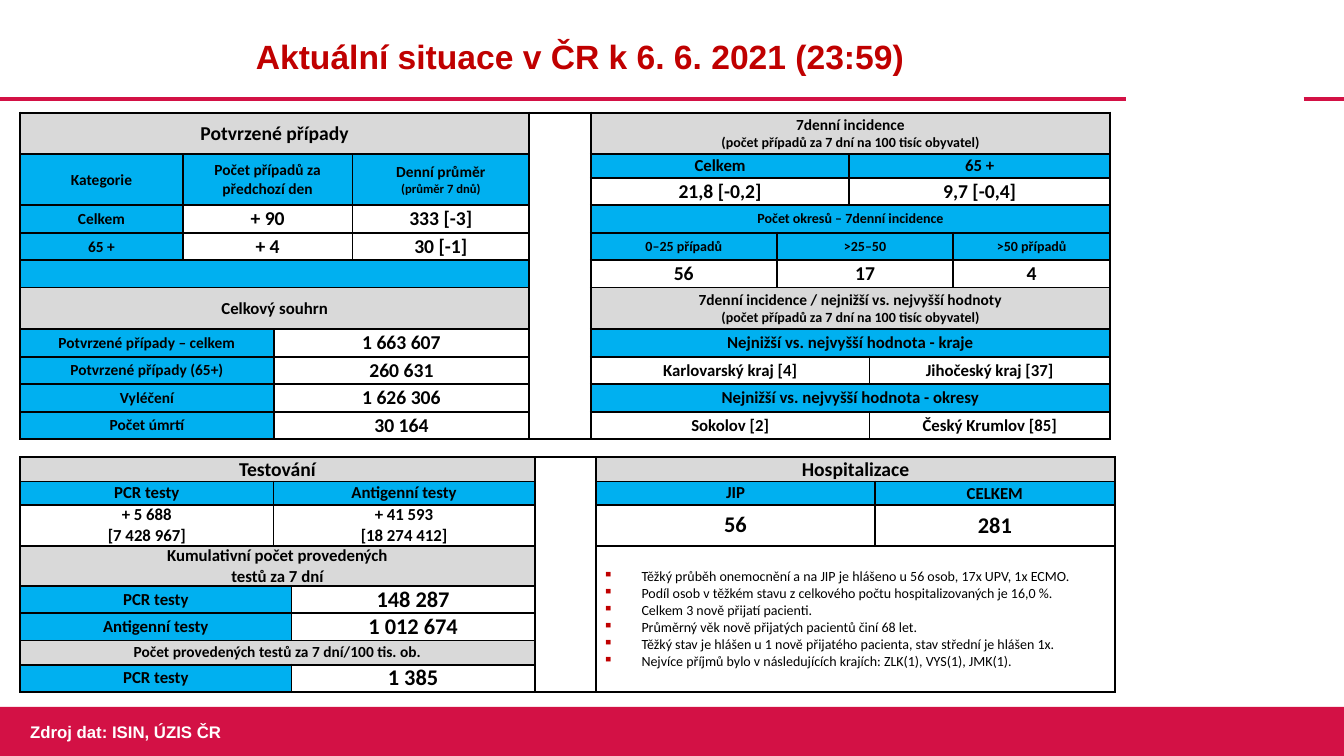
from dataclasses import dataclass

import lxml.etree
import pptx
import pptx.dml.color
import pptx.enum.shapes
import pptx.enum.text
import pptx.oxml.ns
import pptx.util

ALIGN = pptx.enum.text.PP_ALIGN
ANCHOR = pptx.enum.text.MSO_ANCHOR


@dataclass(frozen=True)
class Theme:
    crimson: str = "D31145"
    red: str = "C00000"
    blue: str = "00B0F0"
    gray: str = "D9D9D9"
    white: str = "FFFFFF"
    black: str = "000000"
    heading_font: str = "Arial"
    table_font: str = "Calibri"
    title: int = 24
    figure: int = 16
    value: int = 14
    body: int = 12
    label: int = 11
    small: int = 10
    tiny: int = 9


THEME = Theme()


@dataclass(frozen=True)
class Cell:
    text: str
    sizes: tuple
    fill: str = THEME.white
    columns: int = 1
    rows: int = 1
    loose: bool = False
    bullets: bool = False


def head(text, *sizes, columns):
    return Cell(text, sizes, THEME.gray, columns)


def label(text, *sizes, columns=1, rows=1, loose=False):
    return Cell(text, sizes, THEME.blue, columns, rows, loose)


def value(text, size=THEME.value, columns=1, loose=False):
    return Cell(text, (size,), columns=columns, loose=loose)


def gap(rows):
    return Cell("", (THEME.small,), rows=rows)


class SlideBuilder:
    def __init__(self, presentation, theme):
        self.theme = theme
        self.width = presentation.slide_width
        self.height = presentation.slide_height
        self.slide = presentation.slides.add_slide(presentation.slide_layouts[6])

    def box(self, left, top, width, height):
        return (round(left * self.width), round(top * self.height),
                round(width * self.width), round(height * self.height))

    def color(self, name):
        return pptx.dml.color.RGBColor.from_string(name)

    def style(self, paragraph, size, font, color, bold=True):
        for run in paragraph.runs:
            run.font.size = pptx.util.Pt(size)
            run.font.name = font
            run.font.bold = bold
            run.font.color.rgb = self.color(color)

    def rule(self, start, end, level):
        x1, y, x2, _ = self.box(start, level, end, 0)
        line = self.slide.shapes.add_connector(
            pptx.enum.shapes.MSO_CONNECTOR.STRAIGHT, x1, y, x2, y)
        line.line.color.rgb = self.color(self.theme.crimson)
        line.line.width = pptx.util.Pt(3)
        lxml.etree.SubElement(line._element.spPr, pptx.oxml.ns.qn("a:effectLst"))

    def band(self, *place):
        shape = self.slide.shapes.add_shape(
            pptx.enum.shapes.MSO_SHAPE.RECTANGLE, *self.box(*place))
        shape.shadow.inherit = False
        shape.fill.solid()
        shape.fill.fore_color.rgb = self.color(self.theme.crimson)
        shape.line.fill.background()

    def text(self, text, place, size, color, align=ALIGN.LEFT, anchor=ANCHOR.TOP):
        frame = self.slide.shapes.add_textbox(*self.box(*place)).text_frame
        frame.word_wrap = True
        frame.vertical_anchor = anchor
        frame.text = text
        frame.paragraphs[0].alignment = align
        self.style(frame.paragraphs[0], size, self.theme.heading_font, color)

    def border(self, cell):
        properties = cell._tc.get_or_add_tcPr()
        for position, side in enumerate(("lnL", "lnR", "lnT", "lnB")):
            line = pptx.oxml.parse_xml(
                f'<a:{side} {pptx.oxml.ns.nsdecls("a")} w="19050"><a:solidFill>'
                f'<a:srgbClr val="{self.theme.black}"/></a:solidFill></a:{side}>')
            properties.insert(position, line)

    def bullet(self, paragraph):
        properties = paragraph._p.get_or_add_pPr()
        indent = pptx.util.Inches(0.38)
        properties.set("marL", str(indent))
        properties.set("indent", str(-indent))
        tag = pptx.oxml.ns.qn
        color = lxml.etree.SubElement(properties, tag("a:buClr"))
        lxml.etree.SubElement(color, tag("a:srgbClr"), val=self.theme.red)
        lxml.etree.SubElement(properties, tag("a:buChar"), char="▪")

    def fill_cell(self, cell, content):
        cell.fill.solid()
        cell.fill.fore_color.rgb = self.color(content.fill)
        cell.vertical_anchor = ANCHOR.MIDDLE
        cell.margin_left = cell.margin_right = pptx.util.Inches(0.07)
        cell.margin_top = cell.margin_bottom = 0
        cell.text_frame.text = content.text
        for index, paragraph in enumerate(cell.text_frame.paragraphs):
            paragraph.alignment = ALIGN.JUSTIFY if content.bullets else ALIGN.CENTER
            if content.loose:
                paragraph.line_spacing = 1.07
                paragraph.space_after = pptx.util.Pt(8)
            if content.bullets:
                self.bullet(paragraph)
            size = content.sizes[min(index, len(content.sizes) - 1)]
            self.style(paragraph, size, self.theme.table_font, self.theme.black,
                       not content.bullets)

    def table(self, place, columns, rows, halves):
        left, top, width, height = self.box(*place)
        table = self.slide.shapes.add_table(
            len(rows), len(columns), left, top, width, height).table
        table.first_row = table.horz_banding = False
        for column, weight in zip(table.columns, columns):
            column.width = round(width * weight / sum(columns))
        for row, weight in zip(table.rows, rows):
            row.height = round(height * weight / sum(rows))
        for start, lines in halves:
            for row, line in enumerate(lines):
                column = start
                for content in line:
                    cell = table.cell(row, column)
                    if content.columns * content.rows > 1:
                        cell.merge(table.cell(row + content.rows - 1,
                                              column + content.columns - 1))
                    self.fill_cell(cell, content)
                    column += content.columns
        for cell in table.iter_cells():
            self.border(cell)
            if not cell.text_frame.text:
                lxml.etree.SubElement(cell.text_frame.paragraphs[0]._p,
                                      pptx.oxml.ns.qn("a:endParaRPr"), sz="800")


def main():
    t = THEME
    per_capita = "(počet případů za 7 dní na 100 tisíc obyvatel)"
    cases = [
        [head("Potvrzené případy", t.value, columns=4)],
        [label("Kategorie", t.label, rows=2, loose=True),
         label("Počet případů za předchozí den", t.label, columns=2, rows=2),
         label("Denní průměr\n(průměr 7 dnů)", t.label, t.tiny, rows=2)],
        [],
        [label("Celkem", t.label, loose=True), value("+ 90", columns=2), value("333 [-3]")],
        [label("65 +", t.label, loose=True), value("+ 4", columns=2), value("30 [-1]")],
        [label("", t.label, columns=4)],
        [head("Celkový souhrn", t.body, columns=4)],
    ] + [[label(name, t.label, columns=2), value(total, columns=2)] for name, total in (
        ("Potvrzené případy – celkem", "1 663 607"), ("Potvrzené případy (65+)", "260 631"),
        ("Vyléčení", "1 626 306"), ("Počet úmrtí", "30 164"))]
    incidence = [
        [head("7denní incidence\n" + per_capita, t.label, t.small, columns=5)],
        [label("Celkem", t.body, columns=2), label("65 +", t.body, columns=3)],
        [value("21,8 [-0,2]", columns=2), value("9,7 [-0,4]", columns=3)],
        [label("Počet okresů – 7denní incidence", t.small, columns=5)],
        [label("0–25 případů", t.small), label(">25–50", t.small, columns=3),
         label(">50 případů", t.small)],
        [value("56"), value("17", columns=3), value("4")],
        [head("7denní incidence / nejnižší vs. nejvyšší hodnoty\n" + per_capita,
              t.label, t.small, columns=5)],
    ]
    for area, lowest, highest in (("kraje", "Karlovarský kraj [4]", "Jihočeský kraj [37]"),
                                  ("okresy", "Sokolov [2]", "Český Krumlov [85]")):
        incidence += [
            [label(f"Nejnižší vs. nejvyšší hodnota - {area}", t.body, columns=5)],
            [value(lowest, t.body, columns=3), value(highest, t.body, columns=2)]]
    tests = [
        [head("Testování", t.value, columns=3)],
        [label("PCR testy", t.body), label("Antigenní testy", t.body, columns=2)],
        [value("+ 5 688\n[7 428 967]", t.body),
         value("+ 41 593\n[18 274 412]", t.body, columns=2)],
        [head("Kumulativní počet provedených\ntestů za 7 dní", t.body, columns=3)],
        [label("PCR testy", t.body, columns=2), value("148 287", t.figure)],
        [label("Antigenní testy", t.body, columns=2), value("1 012 674", t.figure)],
        [head("Počet provedených testů za 7 dní/100 tis. ob.", t.label, columns=3)],
        [label("PCR testy", t.body, columns=2), value("1 385", t.figure)],
    ]
    notes = "\n".join((
        "Těžký průběh onemocnění a na JIP je hlášeno u 56 osob, 17x UPV, 1x ECMO.",
        "Podíl osob v těžkém stavu z celkového počtu hospitalizovaných je 16,0 %.",
        "Celkem 3 nově přijatí pacienti.",
        "Průměrný věk nově přijatých pacientů činí 68 let.",
        "Těžký stav je hlášen u 1 nově přijatého pacienta, stav střední je hlášen 1x.",
        "Nejvíce příjmů bylo v následujících krajích: ZLK(1), VYS(1), JMK(1)."))
    hospital = [
        [head("Hospitalizace", t.value, columns=2)],
        [label("JIP", t.body), label("CELKEM", t.body, loose=True)],
        [value("56", t.figure), value("281", t.figure, loose=True)],
        [Cell(notes, (t.small,), columns=2, rows=5, bullets=True)],
    ]

    presentation = pptx.Presentation()
    presentation.slide_width = pptx.util.Inches(13.33)
    presentation.slide_height = pptx.util.Inches(7.5)
    builder = SlideBuilder(presentation, t)
    for start, end in ((0, 0.838), (0.97, 1)):
        builder.rule(start, end, 0.131)
    builder.band(0, 0.935, 1, 0.065)
    builder.text("Aktuální situace v ČR k 6. 6. 2021 (23:59)", (0.026, 0.009, 0.811, 0.131),
                 t.title, t.red, ALIGN.CENTER, ANCHOR.MIDDLE)
    builder.text("Zdroj dat: ISIN, ÚZIS ČR", (0.015, 0.948, 0.168, 0.04), t.body, t.white)
    builder.table((0.015, 0.149, 0.811, 0.432),
                  (161, 90, 78, 175, 61, 184, 72, 20, 83, 155),
                  (41, 23, 27, 27, 27, 27, 41, 27, 27, 27, 27),
                  ((0, cases), (4, [[gap(11)]]), (5, incidence)))
    builder.table((0.015, 0.605, 0.811, 0.31), (251, 13, 241, 61, 276, 238),
                  (24, 23, 41, 40, 27, 27, 24, 27),
                  ((0, tests), (3, [[gap(8)]]), (4, hospital)))
    presentation.save("out.pptx")


if __name__ == "__main__":
    main()
